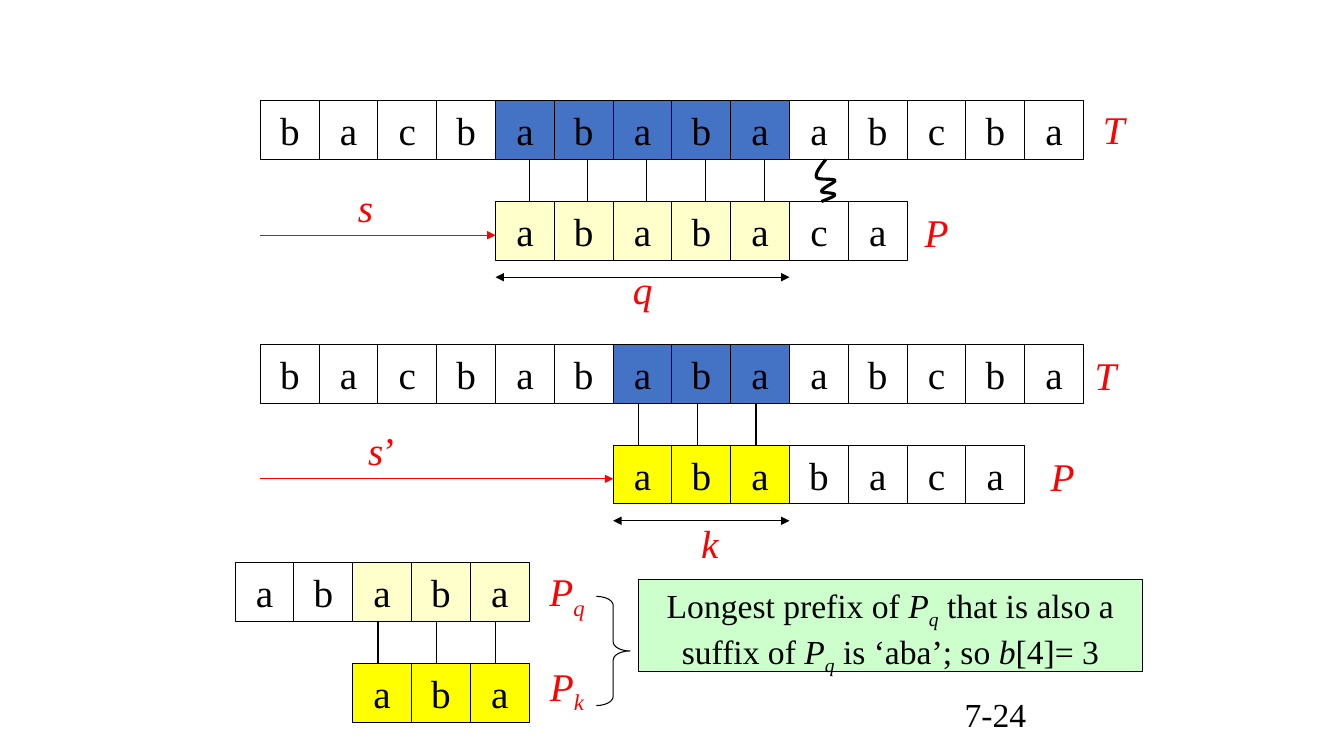
"""Build the slide on prefix matching of pattern P in text T."""
from dataclasses import dataclass

import lxml.etree
import pptx
import pptx.dml.color
import pptx.enum.shapes
import pptx.enum.text
import pptx.oxml.ns
import pptx.util

PX = 7620
CELL = 70
GAP = 50
FONT = "Times New Roman"
COLORS = {"black": "000000", "red": "FF0000", "blue": "4472C4",
          "cream": "FFFFCC", "yellow": "FFFF00", "green": "CCFFCC"}
SHAPES = pptx.enum.shapes.MSO_SHAPE
ANCHORS = pptx.enum.text.MSO_ANCHOR


@dataclass
class Strip:
    x: int
    y: int
    letters: str
    first: int
    last: int
    fill: str


@dataclass
class Ticks:
    x: int
    y: int
    count: int


@dataclass
class Arrow:
    x1: int
    x2: int
    y: int
    color: str
    ends: tuple[str, ...]


@dataclass
class Span:
    text: str
    italic: bool = False
    sub: bool = False


@dataclass
class Label:
    x: int
    y: int
    w: int
    spans: list[Span]


def var(name: str, index: str = "") -> list[Span]:
    spans = [Span(name, italic=True)]
    return spans + [Span(index, italic=True, sub=True)] if index else spans


STRIPS = [
    Strip(310, 120, "bacbababaabcba", 4, 8, "blue"),
    Strip(590, 240, "ababaca", 0, 4, "cream"),
    Strip(310, 410, "bacbababaabcba", 6, 8, "blue"),
    Strip(730, 530, "ababaca", 0, 2, "yellow"),
    Strip(280, 670, "ababa", 2, 4, "cream"),
    Strip(420, 790, "aba", 0, 2, "yellow"),
]
TICKS = [Ticks(630, 190, 5), Ticks(760, 480, 3), Ticks(450, 740, 3)]
ARROWS = [
    Arrow(310, 590, 280, "red", ("tailEnd",)),
    Arrow(310, 730, 570, "red", ("tailEnd",)),
    Arrow(590, 940, 330, "black", ("headEnd", "tailEnd")),
    Arrow(730, 940, 620, "black", ("headEnd", "tailEnd")),
]
LABELS = [
    Label(1301, 120, 50, var("T")),
    Label(1080, 242, 70, var("P")),
    Label(400, 212, 70, var("s")),
    Label(730, 310, 70, var("q")),
    Label(1291, 412, 50, var("T")),
    Label(1230, 532, 70, var("P")),
    Label(420, 502, 70, var("s") + [Span("’")]),
    Label(810, 612, 70, var("k")),
    Label(630, 670, 90, var("P", "q")),
    Label(630, 782, 90, var("P", "k")),
]
NOTE = [Span("Longest prefix of "), *var("P", "q"),
        Span(" that is also a suffix of "), *var("P", "q"),
        Span(" is ‘aba’; so "), *var("b"), Span("[4]= 3")]
SQUIGGLE_START = (983, 190)
SQUIGGLE = [
    ((977, 198), (970, 206), (972, 211)),
    ((973, 215), (994, 212), (994, 215)),
    ((995, 217), (978, 224), (978, 228)),
    ((978, 230), (994, 229), (994, 232)),
    ((994, 234), (980, 239), (978, 240)),
]


def rgb(name: str) -> pptx.dml.color.RGBColor:
    return pptx.dml.color.RGBColor.from_string(COLORS[name])


def write(sp, spans: list[Span], size: int, color: str = "black",
          wrap: bool = False, anchor=ANCHORS.TOP) -> None:
    tf = sp.text_frame
    tf.word_wrap = wrap
    tf.vertical_anchor = anchor
    p = tf.paragraphs[0]
    p.alignment = pptx.enum.text.PP_ALIGN.CENTER
    for span in spans:
        r = p.add_run()
        r.text = span.text
        r.font.name = FONT
        r.font.size = pptx.util.Pt(size)
        r.font.italic = span.italic
        r.font.color.rgb = rgb(color)
        if span.sub:
            r._r.get_or_add_rPr().set("baseline", "-25000")


def outline(sp, fill: str = "", width: float = 0.75) -> None:
    sp.shadow.inherit = False
    sp.line.color.rgb = rgb("black")
    sp.line.width = pptx.util.Pt(width)
    if fill:
        sp.fill.solid()
        sp.fill.fore_color.rgb = rgb(fill)
    else:
        sp.fill.background()


def add_shape(s, kind, x: int, y: int, w: int, h: int, fill: str = ""):
    sp = s.shapes.add_shape(kind, x * PX, y * PX, w * PX, h * PX)
    outline(sp, fill)
    return sp


def add_text(s, x: int, y: int, w: int, h: int):
    return s.shapes.add_textbox(x * PX, y * PX, w * PX, h * PX)


def add_strip(s, strip: Strip) -> None:
    for i, letter in enumerate(strip.letters):
        fill = strip.fill if strip.first <= i <= strip.last else ""
        sp = add_shape(s, SHAPES.RECTANGLE, strip.x + i * CELL, strip.y, CELL, CELL, fill)
        write(sp, [Span(letter)], 28, anchor=ANCHORS.MIDDLE)


def add_line(s, x1: int, y1: int, x2: int, y2: int, color: str = "black",
             ends: tuple[str, ...] = ()) -> None:
    line = s.shapes.add_connector(pptx.enum.shapes.MSO_CONNECTOR.STRAIGHT,
                                  x1 * PX, y1 * PX, x2 * PX, y2 * PX)
    line.line.color.rgb = rgb(color)
    line.line.width = pptx.util.Pt(0.75)
    for end in ends:
        lxml.etree.SubElement(line.line._get_or_add_ln(),
                              pptx.oxml.ns.qn(f"a:{end}"), type="triangle")
    lxml.etree.SubElement(line._element.spPr, pptx.oxml.ns.qn("a:effectLst"))


def add_squiggle(s, steps: int = 8) -> None:
    start, points = SQUIGGLE_START, []
    for c1, c2, end in SQUIGGLE:
        for t in (i / steps for i in range(1, steps + 1)):
            u = 1 - t
            points.append(tuple(
                round(PX * (u**3 * a + 3 * u * u * t * b + 3 * u * t * t * c + t**3 * d))
                for a, b, c, d in zip(start, c1, c2, end)))
        start = end
    x, y = SQUIGGLE_START
    builder = s.shapes.build_freeform(x * PX, y * PX)
    builder.add_line_segments(points, close=False)
    outline(builder.convert_to_shape(), width=2.25)


def main() -> None:
    prs = pptx.Presentation()
    prs.slide_width, prs.slide_height = 1600 * PX, 900 * PX
    s = prs.slides.add_slide(prs.slide_layouts[6])
    for strip in STRIPS:
        add_strip(s, strip)
    for ticks in TICKS:
        for i in range(ticks.count):
            x = ticks.x + i * CELL
            add_line(s, x, ticks.y, x, ticks.y + GAP)
    add_squiggle(s)
    for arrow in ARROWS:
        add_line(s, arrow.x1, arrow.y, arrow.x2, arrow.y, arrow.color, arrow.ends)
    for label in LABELS:
        write(add_text(s, label.x, label.y, label.w, 68), label.spans, 28, "red")
    note = add_shape(s, SHAPES.RECTANGLE, 760, 690, 600, 109, "green")
    write(note, NOTE, 24, wrap=True)
    brace = add_shape(s, SHAPES.RIGHT_BRACE, 710, 710, 40, 130)
    brace.adjustments[0] = 0.27
    number = add_text(s, 1060, 820, 250, 60)
    write(number, [Span("7-24")], 24, wrap=True, anchor=ANCHORS.MIDDLE)
    prs.save("out.pptx")


if __name__ == "__main__":
    main()
